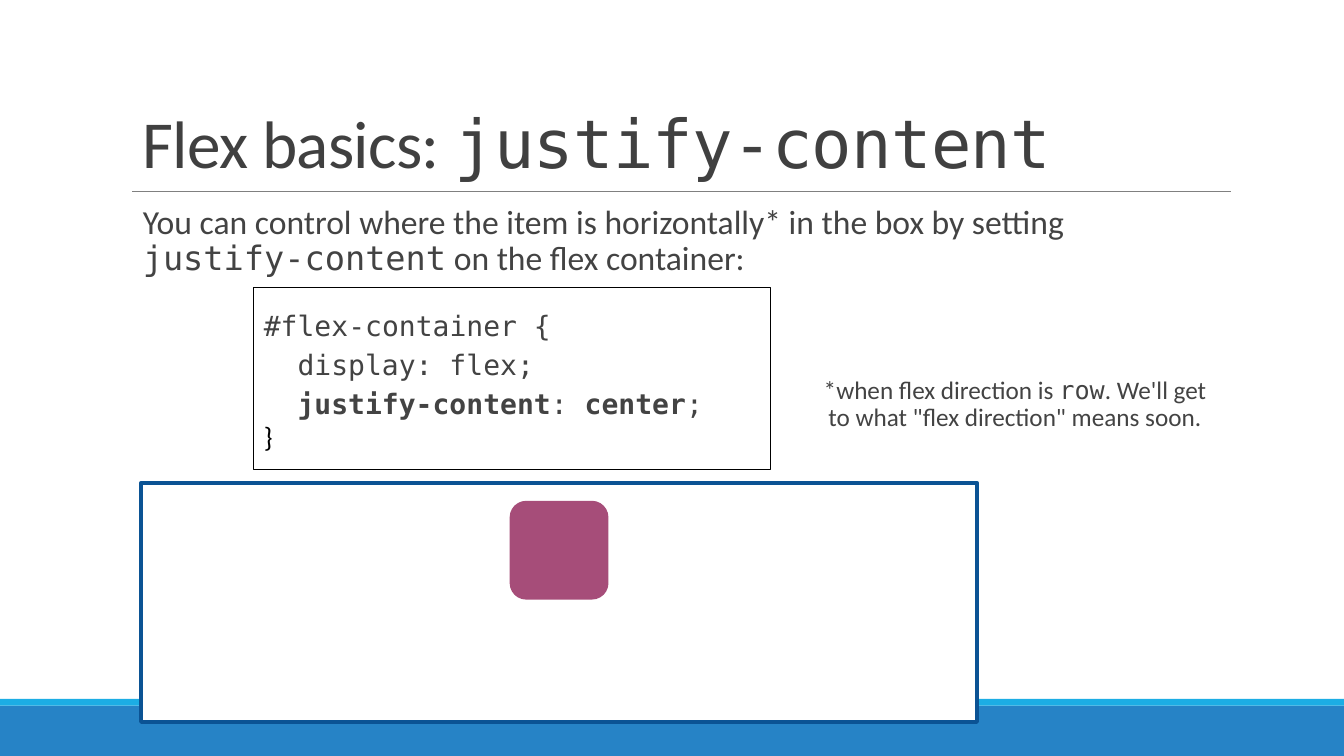
from lxml.etree import SubElement
from pptx import Presentation
from pptx.dml.color import RGBColor
from pptx.enum.shapes import MSO_CONNECTOR, MSO_SHAPE
from pptx.enum.text import MSO_ANCHOR, PP_ALIGN
from pptx.oxml.ns import qn
from pptx.util import Cm, Pt

SANS, MONO = "Calibri", "DejaVu Sans Mono"
BLACK = RGBColor(0x00, 0x00, 0x00)
WHITE = RGBColor(0xFF, 0xFF, 0xFF)
TITLE_GRAY = RGBColor(0x40, 0x40, 0x40)
TEXT_GRAY = RGBColor(0x43, 0x43, 0x43)
RULE_GRAY = RGBColor(0x80, 0x80, 0x80)
BAND_BLUE = RGBColor(0x26, 0x83, 0xC6)
STRIPE_BLUE = RGBColor(0x1C, 0xAD, 0xE4)
CONTAINER_BLUE = RGBColor(0x0B, 0x53, 0x94)
ITEM_PLUM = RGBColor(0xA6, 0x4D, 0x79)

# Runs are (text, font, bold).
TITLE = [("Flex basics: ", SANS, False), ("justify-content", MONO, False)]
BODY = [
    ("You can control where the item is horizontally* in the box by setting ", SANS, False),
    ("justify-content", MONO, False),
    (" on the flex container:", SANS, False),
]
NOTE = [
    ("*when flex direction is ", SANS, False),
    ("row", MONO, False),
    (". We'll get to what \"flex direction\" means soon.", SANS, False),
]
# Code lines are (indented, colour, line spacing, runs).
CODE = [
    (False, TEXT_GRAY, 1.15, [("#flex-container {", MONO, False)]),
    (True, TEXT_GRAY, 1.15, [("display: flex;", MONO, False)]),
    (True, TEXT_GRAY, 1.15, [("justify-content", MONO, True), (": ", MONO, False),
                             ("center", MONO, True), (";", MONO, False)]),
    (False, BLACK, 1.0, [("}", SANS, False)]),
]
CODE_INDENT = Cm(0.85)

SLIDE_WIDTH, SLIDE_HEIGHT = Cm(33.87), Cm(19.05)
BAND_TOP, STRIPE_HEIGHT = Cm(17.78), Cm(0.17)
CONTAINER = (Cm(3.56), Cm(12.17), Cm(21.06), Cm(6.02))
ITEM_SIZE, ITEM_GAP = Cm(2.49), Cm(0.45)


def add_box(slide, preset, box, fill=None, line=None, line_width=0):
    shape = slide.shapes.add_shape(preset, *box)
    shape.shadow.inherit = False
    if fill is None:
        shape.fill.background()
    else:
        shape.fill.solid()
        shape.fill.fore_color.rgb = fill
    if line is None:
        shape.line.fill.background()
    else:
        shape.line.color.rgb = line
        shape.line.width = Pt(line_width)
    return shape


def prepare_frame(shape, anchor):
    frame = shape.text_frame
    frame.word_wrap = True
    frame.vertical_anchor = anchor
    frame.margin_left = frame.margin_right = Cm(0.25)
    frame.margin_top = frame.margin_bottom = Cm(0.25)
    return frame


def write_runs(paragraph, runs, size, color, spacing, alignment=PP_ALIGN.LEFT):
    paragraph.alignment = alignment
    paragraph.line_spacing = spacing
    for text, font_name, bold in runs:
        run = paragraph.add_run()
        run.text = text
        run.font.name = font_name
        run.font.size = Pt(size)
        run.font.bold = bold
        run.font.color.rgb = color


def add_text(slide, box, *style):
    frame = prepare_frame(slide.shapes.add_textbox(*box), MSO_ANCHOR.TOP)
    write_runs(frame.paragraphs[0], *style)
    return frame.paragraphs[0]


def add_footer_and_rule(slide):
    add_box(slide, MSO_SHAPE.RECTANGLE,
            (0, BAND_TOP, SLIDE_WIDTH, SLIDE_HEIGHT - BAND_TOP), BAND_BLUE)
    add_box(slide, MSO_SHAPE.RECTANGLE,
            (0, BAND_TOP - STRIPE_HEIGHT, SLIDE_WIDTH, STRIPE_HEIGHT), STRIPE_BLUE)
    rule = slide.shapes.add_connector(
        MSO_CONNECTOR.STRAIGHT, Cm(3.33), Cm(4.83), Cm(31.01), Cm(4.83))
    rule.line.color.rgb = RULE_GRAY
    rule.line.width = Pt(0.5)
    SubElement(rule._element.spPr, qn("a:effectLst"))


def add_flex_demo(slide):
    """Draw the container with its item centred horizontally."""
    left, top, width, _ = CONTAINER
    add_box(slide, MSO_SHAPE.RECTANGLE, CONTAINER, WHITE, CONTAINER_BLUE, 3)
    item_left = left + (width - ITEM_SIZE) // 2
    add_box(slide, MSO_SHAPE.ROUNDED_RECTANGLE,
            (item_left, top + ITEM_GAP, ITEM_SIZE, ITEM_SIZE), ITEM_PLUM)


def add_code(slide):
    shape = add_box(slide, MSO_SHAPE.RECTANGLE,
                    (Cm(6.4), Cm(7.24), Cm(13.03), Cm(4.6)), None, BLACK, 0.75)
    frame = prepare_frame(shape, MSO_ANCHOR.MIDDLE)
    for index, (indented, color, spacing, runs) in enumerate(CODE):
        paragraph = frame.add_paragraph() if index else frame.paragraphs[0]
        write_runs(paragraph, runs, 20, color, spacing)
        if indented:
            paragraph._p.get_or_add_pPr().set("marL", str(CODE_INDENT))


def main():
    presentation = Presentation()
    presentation.slide_width, presentation.slide_height = SLIDE_WIDTH, SLIDE_HEIGHT
    slide = presentation.slides.add_slide(presentation.slide_layouts[6])
    add_footer_and_rule(slide)
    add_text(slide, (Cm(3.35), Cm(4.93), Cm(24.1), Cm(2.49)), BODY, 24, TEXT_GRAY, 0.9)
    title = add_text(slide, (Cm(3.35), Cm(2.62), Cm(24.33), Cm(2.11)),
                     TITLE, 48, TITLE_GRAY, 0.85)
    for run in title.runs:
        run.font._element.set("spc", "-50")
    add_text(slide, (Cm(20.4), Cm(9.27), Cm(10.36), Cm(2.13)),
             NOTE, 18, TEXT_GRAY, 0.9, PP_ALIGN.CENTER)
    add_flex_demo(slide)
    add_code(slide)
    presentation.save("out.pptx")


if __name__ == "__main__":
    main()
